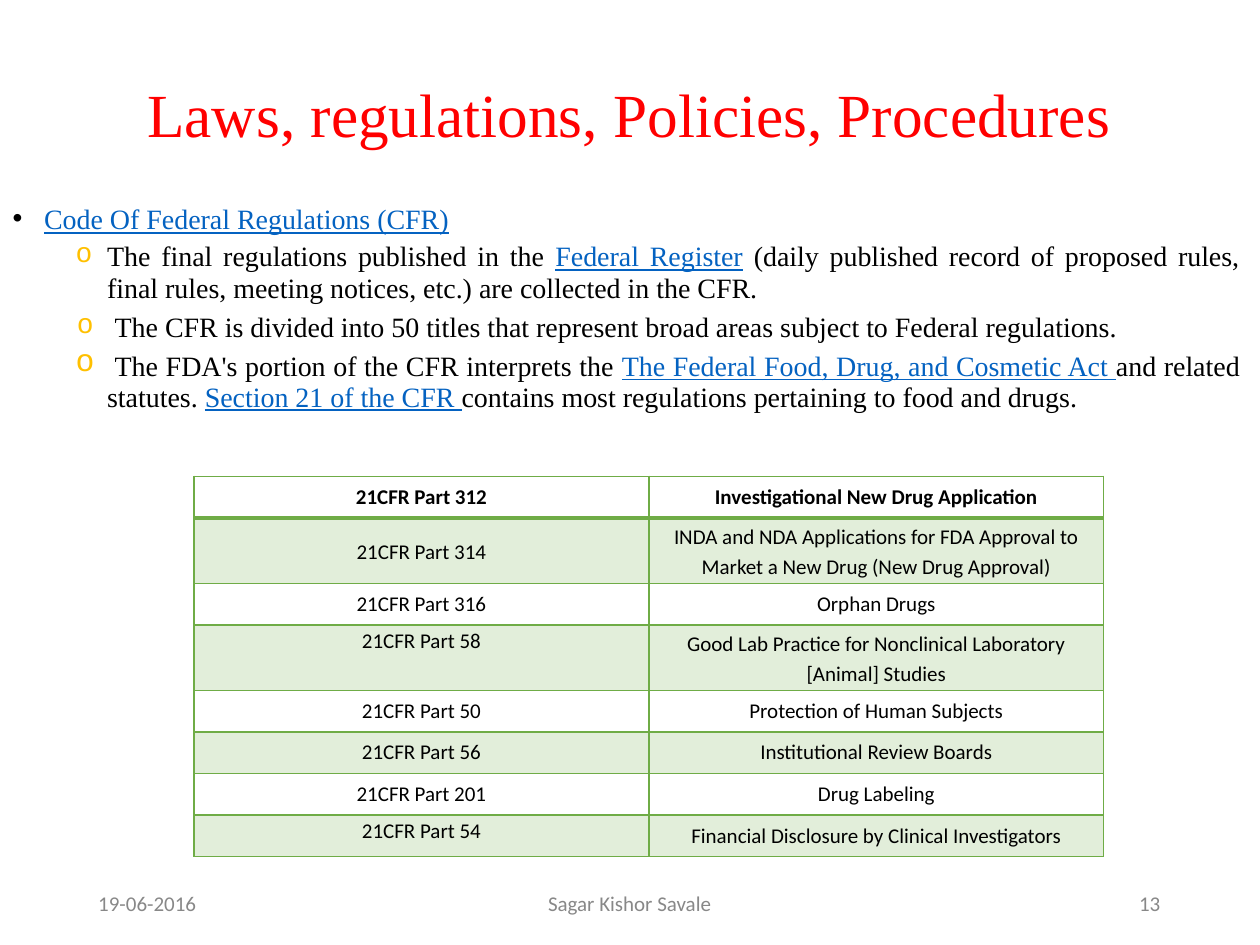
from lxml.etree import SubElement
from pptx import Presentation
from pptx.dml.color import RGBColor
from pptx.enum.text import MSO_ANCHOR, MSO_AUTO_SIZE, PP_ALIGN
from pptx.oxml.ns import qn
from pptx.util import Inches, Pt

RED = RGBColor(0xFF, 0x00, 0x00)
BLACK = RGBColor(0x00, 0x00, 0x00)
GRAY = RGBColor(0x88, 0x88, 0x88)
LINK_BLUE = RGBColor(0x04, 0x62, 0xC1)
GOLD = RGBColor(0xFF, 0xC0, 0x00)
GREEN = RGBColor(0x6F, 0xAC, 0x46)
PALE_GREEN = RGBColor(0xE2, 0xEE, 0xDA)
SERIF = "Times New Roman"
SANS = "Calibri"
NO_BREAK_SPACE = chr(160)

FOOTERS = [("19-06-2016", 0.78, 0.9), ("Sagar Kishor Savale", 4.35, 1.4), ("13", 9.04, 0.25)]
REGULATIONS = [
    ("21CFR Part 312", "Investigational New Drug Application"),
    ("21CFR Part 314", "INDA and NDA Applications for FDA Approval to Market a New Drug (New Drug Approval)"),
    ("21CFR Part 316", "Orphan Drugs"),
    ("21CFR Part 58", "Good Lab Practice for Nonclinical Laboratory [Animal] Studies"),
    ("21CFR Part 50", "Protection of Human Subjects"),
    ("21CFR Part 56", "Institutional Review Boards"),
    ("21CFR Part 201", "Drug Labeling"),
    ("21CFR Part 54", "Financial Disclosure by Clinical Investigators"),
]
TALL_ROWS = (1, 3)
TOP_ALIGNED_PARTS = (3, 7)


def add_span(para, text, size=16, font=SERIF, color=BLACK, bold=False, underline=False):
    span = para.add_run()
    span.text = text
    span.font.size = Pt(size)
    span.font.name = font
    span.font.color.rgb = color
    span.font.bold = bold
    span.font.underline = underline


def add_link(para, text):
    """Add text that looks like a link: blue and underlined."""
    add_span(para, text, color=LINK_BLUE, underline=True)


def prepare_frame(frame, anchor=MSO_ANCHOR.TOP, wrap=True):
    frame.margin_left = frame.margin_right = frame.margin_top = frame.margin_bottom = 0
    frame.auto_size = MSO_AUTO_SIZE.NONE
    frame.word_wrap = wrap
    frame.vertical_anchor = anchor


def place(box, left, top, width, height):
    box.left, box.top = Inches(left), Inches(top)
    box.width, box.height = Inches(width), Inches(height)


def format_bullet(para, char, font, color, left, hanging, before, spacing=None, tab=None):
    para.alignment = PP_ALIGN.JUSTIFY
    para.space_before = Pt(before)
    para.space_after = Pt(0)
    para.line_spacing = spacing
    props = para._p.get_or_add_pPr()
    props.set("marL", str(Inches(left)))
    props.set("indent", str(-Inches(hanging)))
    bullet_color = SubElement(props, qn("a:buClr"))
    SubElement(bullet_color, qn("a:srgbClr"), val=str(color))
    SubElement(props, qn("a:buFont"), typeface=font)
    SubElement(props, qn("a:buChar"), char=char)
    if tab:
        tabs = SubElement(props, qn("a:tabLst"))
        SubElement(tabs, qn("a:tab"), pos=str(Inches(tab)), algn="l")


def add_sub_bullet(frame, **layout):
    para = frame.add_paragraph()
    para.level = 1
    format_bullet(para, "o", "Courier New", GOLD, **layout)
    return para


def fill_title(box):
    place(box, 1.16, 0.59, 7.67, 0.61)
    prepare_frame(box.text_frame, MSO_ANCHOR.MIDDLE, wrap=False)
    para = box.text_frame.paragraphs[0]
    para.alignment = PP_ALIGN.CENTER
    add_span(para, "Laws, regulations, Policies, Procedures", size=35, color=RED)


def fill_body(box):
    place(box, 0.09, 1.54, 9.75, 1.75)
    frame = box.text_frame
    prepare_frame(frame)
    frame.margin_top = Inches(0.06)

    para = frame.paragraphs[0]
    format_bullet(para, "•", "Arial", BLACK, left=0.26, hanging=0.25, before=4)
    add_link(para, "Code Of Federal Regulations (CFR)")

    para = add_sub_bullet(frame, left=0.76, hanging=0.25, before=3, spacing=Pt(18.2))
    add_span(para, "The final regulations published in the ")
    add_link(para, "Federal Register")
    # The fixed space keeps "final rules" together on the second line.
    add_span(para, " (daily published record of proposed rules, final" + NO_BREAK_SPACE
             + "rules, meeting notices, etc.) are collected in the CFR.")

    para = add_sub_bullet(frame, left=0.82, hanging=0.3, before=3.1)
    add_span(para, "The CFR is divided into 50 titles that represent broad areas "
                   "subject to Federal regulations.")

    para = add_sub_bullet(frame, left=0.76, hanging=0.25, before=5.2, spacing=Pt(17.3), tab=0.82)
    add_span(para, "\t", size=18, font=SANS)
    add_span(para, "The FDA's portion of the CFR interprets the ")
    add_link(para, "The Federal Food, Drug, and Cosmetic Act ")
    add_span(para, "and related statutes. ")
    add_link(para, "Section 21 of the CFR ")
    add_span(para, "contains most regulations pertaining to food and drugs.")


def set_border(cell, side, width):
    """Draw one cell edge; side is L, R, T or B. Call before setting the fill."""
    line = SubElement(cell._tc.get_or_add_tcPr(), qn("a:ln" + side), w=str(Pt(width)))
    fill = SubElement(line, qn("a:solidFill"))
    SubElement(fill, qn("a:srgbClr"), val=str(GREEN))


def fill_cell(cell, text, row, top_aligned):
    for side in "LRTB":
        header_rule = (row, side) in ((0, "B"), (1, "T"))
        set_border(cell, side, 2.25 if header_rule else 1)
    if row % 2:
        cell.fill.solid()
        cell.fill.fore_color.rgb = PALE_GREEN
    else:
        cell.fill.background()
    cell.margin_left = cell.margin_right = Inches(0.1)
    cell.margin_top = Inches(0.03 if top_aligned else 0)
    cell.margin_bottom = 0
    cell.vertical_anchor = MSO_ANCHOR.TOP if top_aligned else MSO_ANCHOR.MIDDLE
    para = cell.text_frame.paragraphs[0]
    para.alignment = PP_ALIGN.CENTER
    if row in TALL_ROWS:
        para.line_spacing = 1.15 if not top_aligned else 1.0
    add_span(para, text, size=12, font=SANS, bold=row == 0)


def add_regulation_table(page):
    table = page.shapes.add_table(len(REGULATIONS), 2, Inches(1.54), Inches(3.78),
                                  Inches(7.22), Inches(3.04)).table
    table.first_row = table.horz_banding = False
    for column in table.columns:
        column.width = Inches(3.61)
    for row, texts in enumerate(REGULATIONS):
        table.rows[row].height = Inches(0.52 if row in TALL_ROWS else 0.33)
        for column, text in enumerate(texts):
            top_aligned = column == 0 and row in TOP_ALIGNED_PARTS
            fill_cell(table.cell(row, column), text, row, top_aligned)


def add_footer(page, text, left, width):
    box = page.shapes.add_textbox(Inches(left), Inches(7.07), Inches(width), Inches(0.2))
    prepare_frame(box.text_frame)
    add_span(box.text_frame.paragraphs[0], text, size=12, font=SANS, color=GRAY)


def main():
    deck = Presentation()
    deck.slide_width, deck.slide_height = Inches(10), Inches(7.5)
    page = deck.slides.add_slide(deck.slide_layouts[1])
    for footer in FOOTERS:
        add_footer(page, *footer)
    fill_title(page.shapes.title)
    fill_body(page.placeholders[1])
    add_regulation_table(page)
    deck.save("out.pptx")


if __name__ == "__main__":
    main()
